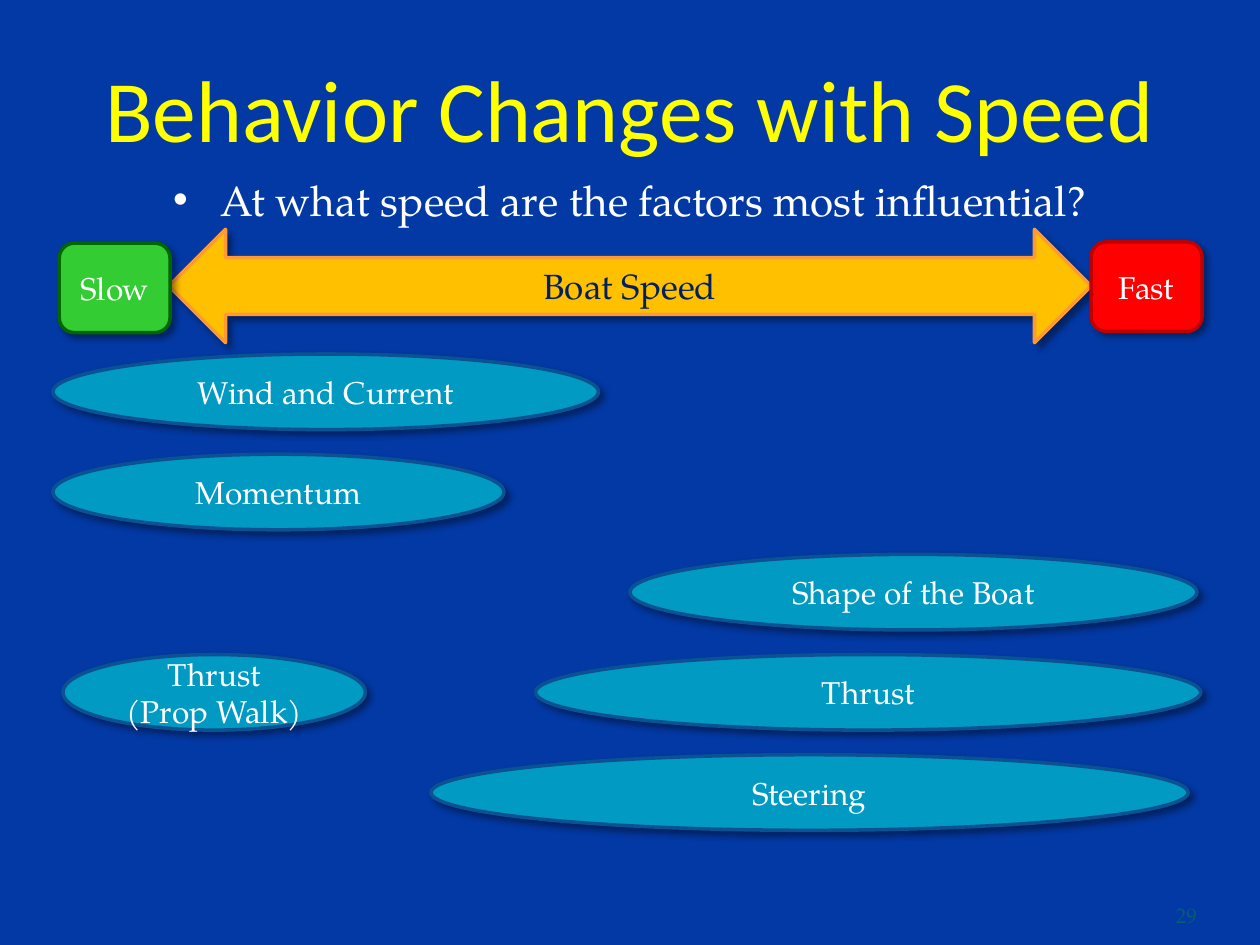
from dataclasses import dataclass, field

from lxml.etree import SubElement
from pptx import Presentation
from pptx.dml.color import RGBColor
from pptx.enum.shapes import MSO_SHAPE
from pptx.enum.text import MSO_ANCHOR, MSO_AUTO_SIZE, PP_ALIGN
from pptx.oxml.ns import qn
from pptx.slide import Slide
from pptx.util import Inches, Pt

COLOURS = {
    "background": "0339A5", "title": "FFFF00", "text": "FFFFFF", "number": "045C75",
    "speed": "FFC000", "speed edge": "FF9933", "speed text": "002060",
    "slow": "33CC33", "slow edge": "006600",
    "fast": "FF0000", "fast edge": "C00000",
    "factor": "009AC2", "factor edge": "0B5292", "shadow": "000000",
}


def colour(name):
    return RGBColor.from_string(COLOURS[name])


@dataclass
class SpeedSlide:
    """Style and drawing methods for one slide on a grid of 100 columns by 75 rows."""

    slide: Slide
    heading_font: str = "Calibri"
    text_font: str = "TeX Gyre Pagella"
    cell: int = field(default=Inches(0.1))

    def lengths(self, *cells):
        return [round(count * self.cell) for count in cells]

    def set_text(self, target, text, size, ink="text", font=None, align=PP_ALIGN.CENTER):
        frame = target.text_frame
        frame.word_wrap = True
        frame.auto_size = MSO_AUTO_SIZE.NONE
        frame.text = text
        for paragraph in frame.paragraphs:
            paragraph.alignment = align
            paragraph.font.name = font or self.text_font
            paragraph.font.size = Pt(size)
            paragraph.font.color.rgb = colour(ink)
        return frame

    def place(self, target, *cells):
        target.left, target.top, target.width, target.height = self.lengths(*cells)

    def title(self, text, *cells):
        heading = self.slide.shapes.title
        self.place(heading, *cells)
        frame = self.set_text(heading, text, 50, "title", self.heading_font)
        frame.vertical_anchor = MSO_ANCHOR.BOTTOM
        frame.margin_left = frame.margin_right = frame.margin_bottom = 0

    def question(self, text, *cells):
        body = self.slide.placeholders[1]
        self.place(body, *cells)
        body.text_frame.text = text
        properties = body.text_frame.paragraphs[0]._p.get_or_add_pPr()
        properties.set("marL", "0")
        properties.set("indent", "0")
        SubElement(properties, qn("a:buNone"))
        frame = self.set_text(body, text, 24.1)
        frame.paragraphs[0].space_before = Pt(0)

    def number(self, text, *cells):
        label = self.slide.shapes.add_textbox(*self.lengths(*cells))
        frame = self.set_text(label, text, 12, "number", align=PP_ALIGN.RIGHT)
        frame.margin_left = frame.margin_right = 0
        frame.vertical_anchor = MSO_ANCHOR.MIDDLE

    def shape(self, kind, look, text, *cells, size=18, ink="text"):
        figure = self.slide.shapes.add_shape(kind, *self.lengths(*cells))
        figure.fill.solid()
        figure.fill.fore_color.rgb = colour(look)
        figure.line.color.rgb = colour(f"{look} edge")
        figure.line.width = Pt(2)
        self.set_text(figure, text, size, ink).vertical_anchor = MSO_ANCHOR.MIDDLE
        self.cast_shadow(figure)

    def cast_shadow(self, figure):
        figure.shadow.inherit = False
        effects = figure._element.spPr.find(qn("a:effectLst"))
        shadow = SubElement(effects, qn("a:outerShdw"), blurRad=str(Pt(4)), dist=str(Pt(3)),
                            dir=str(45 * 60000), algn="tl", rotWithShape="0")
        tint = SubElement(shadow, qn("a:srgbClr"), val=COLOURS["shadow"])
        SubElement(tint, qn("a:alpha"), val="40000")


def main():
    deck = Presentation()
    deck.slide_width, deck.slide_height = Inches(10), Inches(7.5)
    slide = deck.slides.add_slide(deck.slide_layouts[1])
    slide.background.fill.solid()
    slide.background.fill.fore_color.rgb = colour("background")

    page = SpeedSlide(slide)
    page.title("Behavior Changes with Speed", 5, 0.2, 90, 12.5)
    page.question("At what speed are the factors most influential?", 9.2, 13.3, 81.6, 4.4)
    page.shape(MSO_SHAPE.LEFT_RIGHT_ARROW, "speed", "Boat Speed", 13.4, 18.2, 73.2, 9,
               size=20, ink="speed text")
    page.shape(MSO_SHAPE.ROUNDED_RECTANGLE, "slow", "Slow", 4.7, 19.3, 8.8, 7.1)
    page.shape(MSO_SHAPE.ROUNDED_RECTANGLE, "fast", "Fast", 86.6, 19.2, 8.8, 7.1)

    first_row, row_step = 28.1, 7.95
    factors = [
        ("Wind and Current", 0, 4.2, 43.3),
        ("Momentum", 1, 4.2, 35.8),
        ("Shape of the Boat", 2, 50, 45),
        ("Thrust", 3, 42.5, 52.8),
        ("Steering", 4, 34.2, 60.1),
        ("Thrust\n(Prop Walk)", 3, 5, 24),
    ]
    for factor, row, left, width in factors:
        page.shape(MSO_SHAPE.OVAL, "factor", factor, left, first_row + row * row_step, width, 6)

    page.number("29", 85, 70.6, 10, 4)
    deck.save("out.pptx")


if __name__ == "__main__":
    main()
